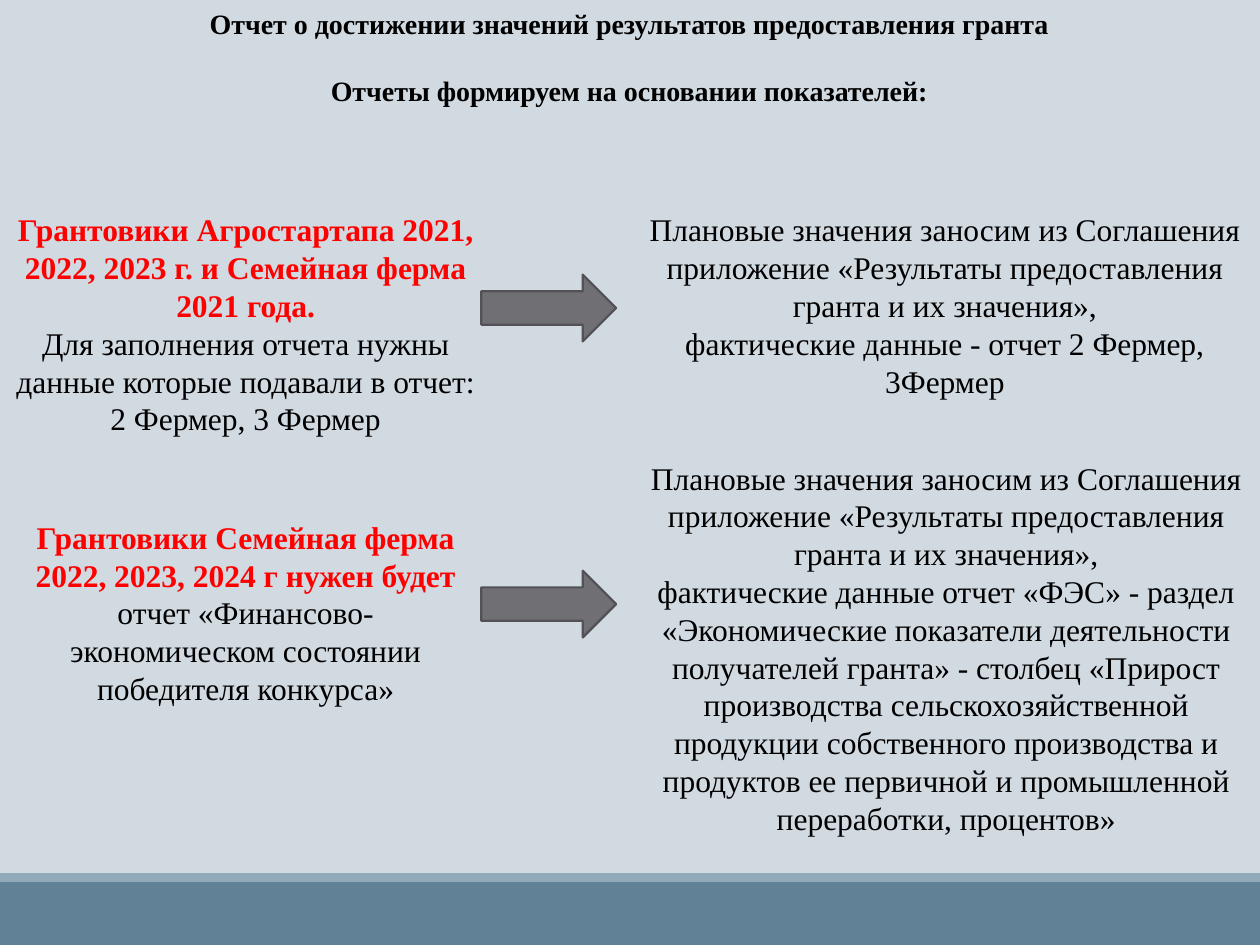
"""Build the slide on grant result reports and the data behind them."""
from pptx import Presentation
from pptx import util as u
from pptx.dml.color import RGBColor
from pptx.enum import shapes, text

BACK = RGBColor(0xD1, 0xD9, 0xE1)
BAND = RGBColor(0x61, 0x81, 0x97)
STRIPE = RGBColor(0x92, 0xA9, 0xB9)
GRAY = RGBColor(0x6F, 0x6F, 0x74)
EDGE = RGBColor(0x52, 0x52, 0x56)
RED = RGBColor(0xFF, 0, 0)
BLACK = RGBColor(0, 0, 0)
FONT = "Times New Roman"

HEAD = [
    ("Отчет о достижении значений результатов предоставления гранта", BLACK, True),
    ("Отчеты формируем на основании показателей:", BLACK, True),
]
PLAN = ("Плановые значения заносим из Соглашения приложение "
        "«Результаты предоставления гранта и их значения»,", BLACK, False)
BOXES = [
    ((0, 1.62, 3.9, 2.22), [
        ("Грантовики Агростартапа 2021, 2022, 2023 г. и Семейная ферма 2021 года.", RED, True),
        ("Для заполнения отчета нужны данные которые подавали в отчет: "
         "2 Фермер, 3 Фермер", BLACK, False)]),
    ((5, 1.62, 5, 1.62), [
        PLAN,
        ("фактические данные - отчет 2 Фермер, 3Фермер", BLACK, False)]),
    ((0.1, 4.06, 3.7, 1.62), [
        ("Грантовики Семейная ферма 2022, 2023, 2024 г нужен будет", RED, True),
        ("отчет «Финансово-экономическом состоянии победителя конкурса»", BLACK, False)]),
    ((5.02, 3.59, 4.98, 3.13), [
        PLAN,
        ("фактические данные отчет «ФЭС» - раздел «Экономические показатели "
         "деятельности получателей гранта» - столбец «Прирост производства "
         "сельскохозяйственной продукции собственного производства и продуктов "
         "ее первичной и промышленной переработки, процентов»", BLACK, False)]),
]
BANDS = [((0, 7, 10, 0.5), BAND), ((0, 6.93, 10, 0.07), STRIPE)]
ARROWS = [2.18, 4.53]


def place(at):
    return [u.Inches(x) for x in at]


def write(box, paras, size, gap=0):
    frame = box.text_frame
    frame.word_wrap = True
    frame.auto_size = text.MSO_AUTO_SIZE.NONE
    frame.vertical_anchor = text.MSO_ANCHOR.TOP
    for i, (words, color, bold) in enumerate(paras):
        para = frame.add_paragraph() if i else frame.paragraphs[0]
        para.alignment = text.PP_ALIGN.CENTER
        para.space_before = u.Pt(gap if i else 0)
        run = para.add_run()
        run.text = words
        font = run.font
        font.name, font.size, font.bold = FONT, u.Pt(size), bold
        font.color.rgb = color


def draw(slide, kind, at, fill, edge=None):
    shape = slide.shapes.add_shape(kind, *place(at))
    shape.shadow.inherit = False
    shape.fill.solid()
    shape.fill.fore_color.rgb = fill
    if edge is None:
        shape.line.fill.background()
    else:
        shape.line.color.rgb = edge
        shape.line.width = u.Pt(1.25)


def main():
    deck = Presentation()
    deck.slide_width, deck.slide_height = place((10, 7.5))
    slide = deck.slides.add_slide(deck.slide_layouts[5])
    slide.background.fill.solid()
    slide.background.fill.fore_color.rgb = BACK
    for at, fill in BANDS:
        draw(slide, shapes.MSO_SHAPE.RECTANGLE, at, fill)
    title = slide.shapes.title
    title.left, title.top, title.width, title.height = place((0.35, 0, 9.29, 0.94))
    write(title, HEAD, 16, 19)
    for at, paras in BOXES:
        write(slide.shapes.add_textbox(*place(at)), paras, 18)
    for top in ARROWS:
        draw(slide, shapes.MSO_SHAPE.RIGHT_ARROW, (3.82, top, 1.07, 0.53), GRAY, EDGE)
    deck.save("out.pptx")


if __name__ == "__main__":
    main()
